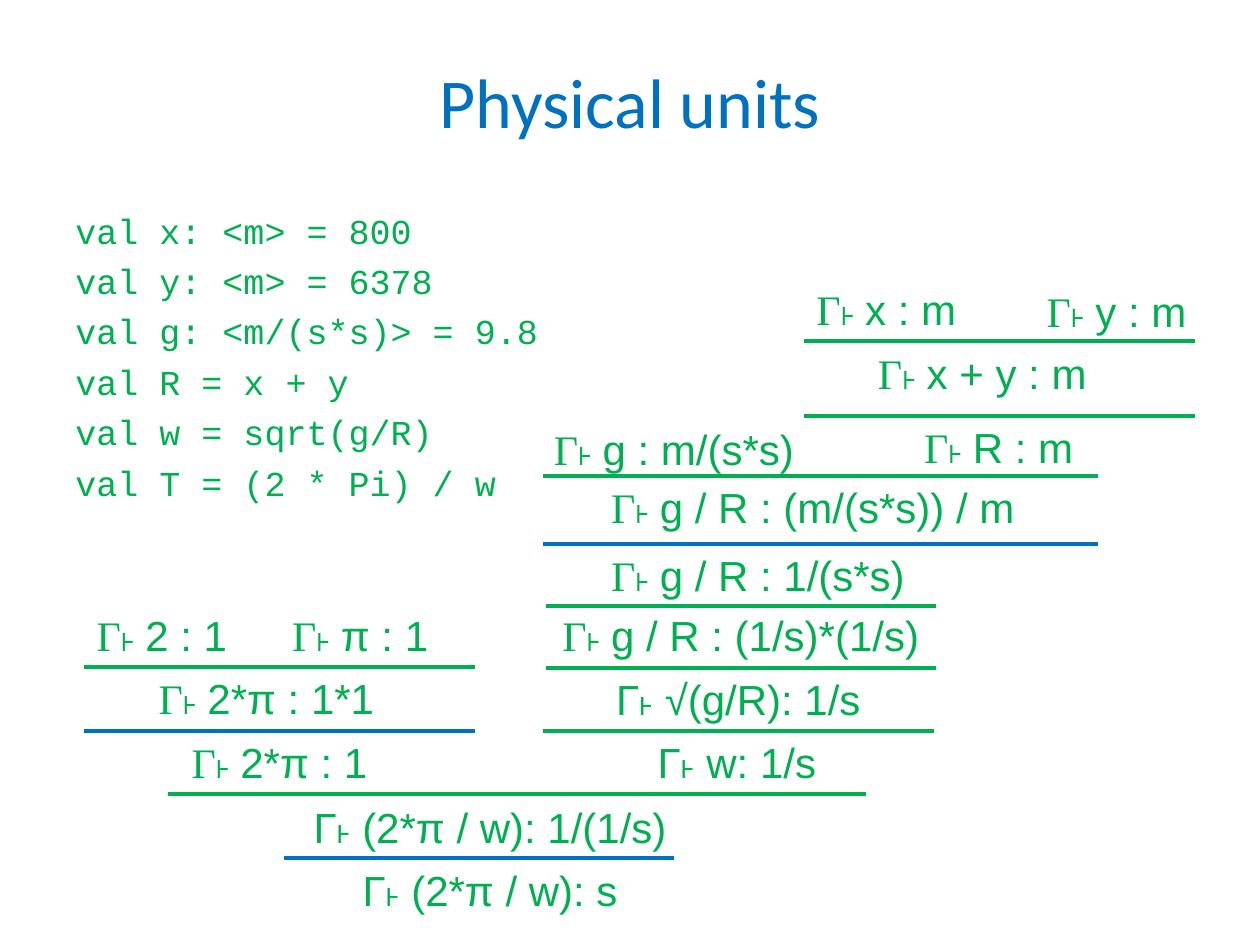
from pptx import Presentation
from pptx.dml.color import RGBColor
from pptx.enum.shapes import MSO_CONNECTOR as Connector
from pptx.enum.text import MSO_ANCHOR as Anchor, MSO_AUTO_SIZE as AutoSize, PP_ALIGN as Align
from pptx.oxml.ns import qn
from pptx.util import Cm, Pt
from lxml.etree import SubElement

COLORS = {"blue": "0070C0", "green": "00B050"}
LINE_HEIGHT = 1.27
TURNSTILE = "Γ˫ "

CODE = [
    "val x: <m> = 800",
    "val y: <m> = 6378",
    "val g: <m/(s*s)> = 9.8",
    "val R = x + y",
    "val w = sqrt(g/R)",
    "val T = (2 * Pi) / w",
]

LEFT_JUDGEMENTS = [
    ("x : m", 16.21, 5.59, 3.94),
    ("y : m", 20.85, 5.64, 3.94),
    ("x + y : m", 17.45, 6.88, 5.36),
    ("g / R : (m/(s*s)) / m", 12.07, 9.58, 9.53),
    ("g / R : 1/(s*s)", 12.07, 10.95, 6.76),
    ("2 : 1", 1.7, 12.17, 3.94),
    ("π : 1", 5.64, 12.17, 3.94),
    ("2*π : 1*1", 2.95, 13.44, 5.36),
]

CENTRED_JUDGEMENTS = [
    ("g : m/(s*s)", 9.65, 8.41, 7.87),
    ("R : m", 17.45, 8.38, 5.36),
    ("g / R : (1/s)*(1/s)", 11, 12.17, 7.87),
    ("2*π : 1", 1.7, 14.73, 7.87),
]

ARIAL_JUDGEMENTS = [
    ("√(g/R): 1/s", 11.66, 13.46, 6.45),
    ("w: 1/s", 11.63, 14.73, 6.45),
    ("(2*π / w): 1/(1/s)", 5.64, 16.03, 8.48),
    ("(2*π / w): s", 5.64, 17.3, 8.48),
]

RULES = [
    (16.21, 6.88, 7.87, "green"),
    (16.21, 8.38, 7.87, "green"),
    (10.95, 9.6, 11.18, "green"),
    (10.95, 10.97, 11.18, "blue"),
    (11, 12.22, 7.87, "green"),
    (11, 13.46, 7.87, "green"),
    (10.95, 14.73, 7.87, "green"),
    (1.7, 13.44, 7.87, "green"),
    (1.7, 14.73, 7.87, "blue"),
    (3.38, 16, 14.07, "green"),
    (5.72, 17.3, 7.87, "blue"),
]


class SlideBuilder:
    def __init__(self, slide):
        self.slide = slide

    def color(self, name):
        return RGBColor.from_string(COLORS[name])

    def run(self, paragraph, text, font, size, color="green"):
        run = paragraph.add_run()
        run.text = text
        run.font.name = font
        run.font.size = Pt(size)
        run.font.color.rgb = self.color(color)

    def title(self, text, left, top, width, height):
        shape = self.slide.shapes.title
        shape.left, shape.top = Cm(left), Cm(top)
        shape.width, shape.height = Cm(width), Cm(height)
        shape.text_frame.vertical_anchor = Anchor.MIDDLE
        paragraph = shape.text_frame.paragraphs[0]
        paragraph.alignment = Align.CENTER
        self.run(paragraph, text, "Calibri", 40, "blue")

    def text_box(self, left, top, width, height):
        shape = self.slide.shapes.add_textbox(Cm(left), Cm(top), Cm(width), Cm(height))
        shape.text_frame.word_wrap = True
        return shape.text_frame

    def code(self, lines, left, top, width, height):
        frame = self.text_box(left, top, width, height)
        for index, line in enumerate(lines):
            paragraph = frame.add_paragraph() if index else frame.paragraphs[0]
            paragraph.space_before = Pt(4.8)
            self.run(paragraph, line, "Courier New", 20)

    def judgement(self, text, left, top, width, align, symbol_font="Times New Roman"):
        frame = self.text_box(left, top, width, LINE_HEIGHT)
        frame.auto_size = AutoSize.SHAPE_TO_FIT_TEXT
        paragraph = frame.paragraphs[0]
        paragraph.alignment = align
        self.run(paragraph, TURNSTILE, symbol_font, 24)
        self.run(paragraph, text, "Arial", 24)

    def rule(self, left, top, width, color):
        connector = self.slide.shapes.add_connector(
            Connector.STRAIGHT, Cm(left), Cm(top), Cm(left + width), Cm(top))
        connector.line.color.rgb = self.color(color)
        connector.line.width = Pt(2.25)
        SubElement(connector._element.spPr, qn("a:effectLst"))


def main():
    presentation = Presentation()
    presentation.slide_width, presentation.slide_height = Cm(25.4), Cm(19.05)
    builder = SlideBuilder(presentation.slides.add_slide(presentation.slide_layouts[5]))
    builder.title("Physical units", 1.27, 0.43, 22.86, 3.18)
    builder.code(CODE, 1.27, 4.09, 22.86, 6.38)
    for judgement in LEFT_JUDGEMENTS:
        builder.judgement(*judgement, Align.LEFT)
    for judgement in CENTRED_JUDGEMENTS:
        builder.judgement(*judgement, Align.CENTER)
    for judgement in ARIAL_JUDGEMENTS:
        builder.judgement(*judgement, Align.CENTER, "Arial")
    for rule in RULES:
        builder.rule(*rule)
    presentation.save("out.pptx")


if __name__ == "__main__":
    main()
